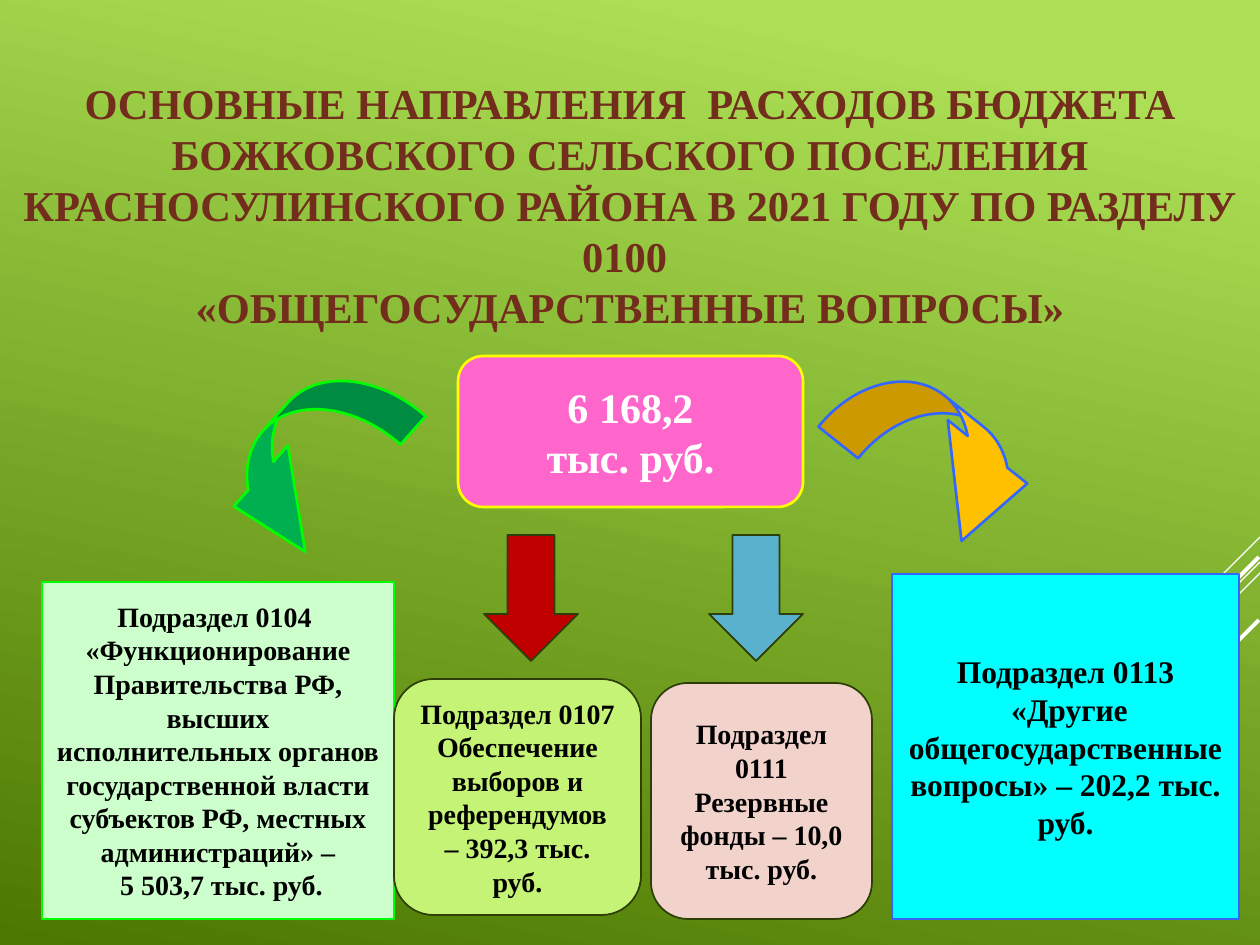
import pptx
import pptx.dml.color
import pptx.enum.shapes
import pptx.enum.text
import pptx.oxml
import pptx.oxml.ns
import pptx.util

SHAPE = pptx.enum.shapes.MSO_SHAPE
EMU_PER_PX = 914400 / 126
THEME = {
    "font": "Times New Roman",
    "title_size": 24.3, "total_size": 24, "large_size": 18, "body_size": 16,
    "bg_light": "ACDF55", "bg_dark": "4C7800",
    "title": "722D1D", "white": "FFFFFF", "black": "000000",
    "pink": "FF66CC", "yellow": "FFFF00", "mint": "CCFFCC", "lime": "00FF00",
    "cyan": "00FFFF", "blue": "3366FF", "gold": "FFC000", "green": "00B050",
    "red": "C00000", "sky": "59B1CD", "olive": "2E3E07",
    "light_green": "C5F375", "rose": "F2D3CC",
}


def px(n):
    return pptx.util.Emu(round(n * EMU_PER_PX))


def rgb(name):
    return pptx.dml.color.RGBColor.from_string(THEME[name])


prs = pptx.Presentation()
prs.slide_width, prs.slide_height = px(1260), px(945)
s = prs.slides.add_slide(prs.slide_layouts[6])

bg = s.background.fill
bg.gradient()
bg.gradient_angle = 258
for stop, position, color in zip(bg.gradient_stops, (0.1, 1), ("bg_light", "bg_dark")):
    stop.position = position
    stop.color.rgb = rgb(color)

# Diagonal lines at the right edge: start x, start y, run, width
for x, y, run, width in [
    (1260, 537, 105, 0.75),
    (1260, 562, 340, 0.75),
    (1260, 573, 217, 0.75),
    (1259, 557, 198, 2.25),
    (1259, 620, 143, 2.25),
]:
    line = s.shapes.add_connector(
        pptx.enum.shapes.MSO_CONNECTOR.STRAIGHT, px(x), px(y), px(x - run), px(y + run))
    line.line.color.rgb = rgb("white")
    line.line.width = pptx.util.Pt(width)
    line._element.spPr.append(pptx.oxml.parse_xml(
        "<a:effectLst %s/>" % pptx.oxml.ns.nsdecls("a")))

# Arrows: shape, box, rotation, adjustments, fill, line, line width
arrows = [
    (SHAPE.CURVED_DOWN_ARROW, (825, 408, 234, 103), 38.6, (0.493, 0.988, 0.834),
     "gold", "blue", 1.5),
    (SHAPE.CURVED_UP_ARROW, (199, 406, 222, 112), 131.6, (0.338, 0.727, 0.747),
     "green", "lime", 1.5),
    (SHAPE.DOWN_ARROW, (484, 535, 94, 126), 0, (), "red", "olive", 1),
    (SHAPE.DOWN_ARROW, (709, 535, 94, 126), 0, (), "sky", "olive", 1),
]
for kind, box, rotation, adjustments, fill, outline, width in arrows:
    sp = s.shapes.add_shape(kind, *map(px, box))
    sp.shadow.inherit = False
    sp.rotation = rotation
    for i, value in enumerate(adjustments):
        sp.adjustments[i] = value
    sp.fill.solid()
    sp.fill.fore_color.rgb = rgb(fill)
    sp.line.color.rgb = rgb(outline)
    sp.line.width = pptx.util.Pt(width)

# Text panels: shape, box, fill, line, line width, insets (x, y), size, colour, paragraphs
panels = [
    (SHAPE.RECTANGLE, (0, 72, 1260, 266), None, None, 0, (13, 6), "title_size", "title",
     ["ОСНОВНЫЕ НАПРАВЛЕНИЯ  РАСХОДОВ БЮДЖЕТА БОЖКОВСКОГО СЕЛЬСКОГО ПОСЕЛЕНИЯ "
      "КРАСНОСУЛИНСКОГО РАЙОНА В 2021 ГОДУ ПО РАЗДЕЛУ 0100 \v"
      "«ОБЩЕГОСУДАРСТВЕННЫЕ ВОПРОСЫ»"]),
    (SHAPE.ROUNDED_RECTANGLE, (458, 356, 345, 151), "pink", "yellow", 1.5, (18, 6),
     "total_size", "white", ["6 168,2", "тыс. руб."]),
    (SHAPE.RECTANGLE, (42, 582, 352, 337), "mint", "lime", 1.5, (15, 0),
     "body_size", "black",
     ["Подраздел 0104 ",
      "«Функционирование Правительства РФ, высших исполнительных органов "
      "государственной власти субъектов РФ, местных администраций» –",
      " 5 503,7 тыс. руб."]),
    (SHAPE.RECTANGLE, (892, 574, 347, 345), "cyan", "blue", 1.5, (15, 0),
     "large_size", "black",
     ["Подраздел 0113", " «Другие общегосударственные вопросы» – 202,2 тыс. руб."]),
    (SHAPE.ROUNDED_RECTANGLE, (394, 679, 247, 236), "light_green", "olive", 1, (13, 6),
     "body_size", "black",
     ["Подраздел 0107", "Обеспечение выборов и референдумов – 392,3 тыс. руб."]),
    (SHAPE.ROUNDED_RECTANGLE, (651, 683, 221, 236), "rose", "olive", 1, (13, 6),
     "body_size", "black",
     ["Подраздел 0111", "Резервные фонды – 10,0 тыс. руб."]),
]
for kind, box, fill, outline, width, inset, size, color, lines in panels:
    if fill:
        sp = s.shapes.add_shape(kind, *map(px, box))
        sp.shadow.inherit = False
        sp.fill.solid()
        sp.fill.fore_color.rgb = rgb(fill)
        sp.line.color.rgb = rgb(outline)
        sp.line.width = pptx.util.Pt(width)
    else:
        sp = s.shapes.add_textbox(*map(px, box))
    tf = sp.text_frame
    tf.word_wrap = True
    tf.vertical_anchor = pptx.enum.text.MSO_ANCHOR.MIDDLE
    tf.margin_left = tf.margin_right = px(inset[0])
    tf.margin_top = tf.margin_bottom = px(inset[1])
    for i, text in enumerate(lines):
        p = tf.add_paragraph() if i else tf.paragraphs[0]
        p.text = text
        p.alignment = pptx.enum.text.PP_ALIGN.CENTER
        p.font.name = THEME["font"]
        p.font.size = pptx.util.Pt(THEME[size])
        p.font.bold = True
        p.font.color.rgb = rgb(color)

prs.save("out.pptx")
